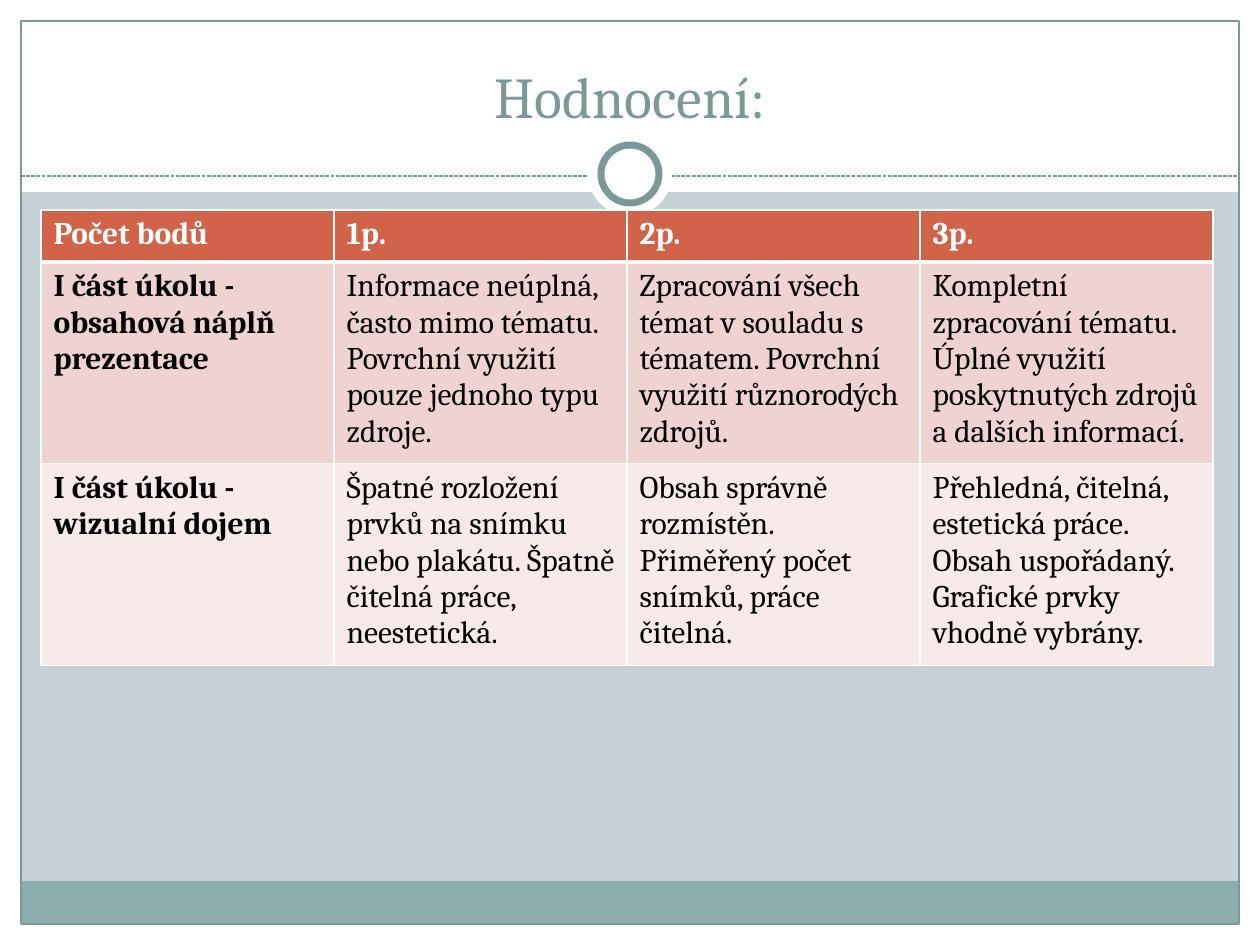
from lxml.etree import SubElement
from pptx import Presentation
from pptx.dml.color import RGBColor
from pptx.enum.dml import MSO_LINE
from pptx.enum.shapes import MSO_CONNECTOR, MSO_SHAPE
from pptx.enum.text import MSO_ANCHOR, PP_ALIGN
from pptx.oxml.ns import qn
from pptx.util import Emu, Pt

PIXELS_PER_INCH = 126
WIDTH, HEIGHT = 1260, 945
MARGIN = 21
FONT = "Cambria"

WHITE = RGBColor(0xFF, 0xFF, 0xFF)
BLACK = RGBColor(0x00, 0x00, 0x00)
BACKGROUND = RGBColor(0xC5, 0xD1, 0xD7)
TEAL = RGBColor(0x7C, 0x99, 0x9A)
FOOTER_TEAL = RGBColor(0x8C, 0xAD, 0xAE)
HEADER_RED = RGBColor(0xD1, 0x63, 0x49)
ROW_FILLS = [HEADER_RED, RGBColor(0xEE, 0xD3, 0xD0), RGBColor(0xF7, 0xEA, 0xE9)]

CRITERIA = [
    ["Počet bodů", "1p.", "2p.", "3p."],
    [
        "I část úkolu - obsahová náplň prezentace",
        "Informace neúplná, často mimo tématu. Povrchní využití pouze jednoho typu zdroje.",
        "Zpracování všech témat v souladu s tématem. Povrchní využití různorodých zdrojů.",
        "Kompletní zpracování tématu. Úplné využití poskytnutých zdrojů a dalších informací.",
    ],
    [
        "I část úkolu -\nwizualní dojem",
        "Špatné rozložení prvků na snímku nebo plakátu. Špatně čitelná práce, neestetická.",
        "Obsah správně rozmístěn. Přiměřený počet snímků, práce čitelná.",
        "Přehledná, čitelná, estetická práce. Obsah uspořádaný. Grafické prvky vhodně vybrány.",
    ],
]


def px(length):
    return Emu(round(length * 914400 / PIXELS_PER_INCH))


def write_text(text_frame, text, size, color, bold=False, align=PP_ALIGN.LEFT):
    text_frame.text = text
    for paragraph in text_frame.paragraphs:
        paragraph.alignment = align
        font = paragraph.runs[0].font
        font.name = FONT
        font.size = Pt(size)
        font.bold = bold
        font.color.rgb = color


def add_box(slide, left, top, width, height, fill=None, line=None, line_width=0.75,
            kind=MSO_SHAPE.RECTANGLE):
    shape = slide.shapes.add_shape(kind, px(left), px(top), px(width), px(height))
    shape.shadow.inherit = False
    if fill is None:
        shape.fill.background()
    else:
        shape.fill.solid()
        shape.fill.fore_color.rgb = fill
    if line is None:
        shape.line.fill.background()
    else:
        shape.line.color.rgb = line
        shape.line.width = Pt(line_width)


def add_circle(slide, center_x, center_y, diameter, **style):
    add_box(slide, center_x - diameter / 2, center_y - diameter / 2, diameter, diameter,
            kind=MSO_SHAPE.OVAL, **style)


def add_dashed_line(slide, left, right, y):
    connector = slide.shapes.add_connector(
        MSO_CONNECTOR.STRAIGHT, px(left), px(y), px(right), px(y))
    connector.line.color.rgb = TEAL
    connector.line.width = Pt(0.75)
    connector.line.dash_style = MSO_LINE.SQUARE_DOT
    SubElement(connector._element.spPr, qn("a:effectLst"))


def add_title(slide, text):
    title = slide.shapes.add_textbox(px(42), px(31), px(1176), px(105))
    title.text_frame.word_wrap = True
    title.text_frame.vertical_anchor = MSO_ANCHOR.BOTTOM
    write_text(title.text_frame, text, size=33, color=TEAL, align=PP_ALIGN.CENTER)


def set_borders(cell, **widths):
    properties = cell._tc.get_or_add_tcPr()
    for index, side in enumerate("LRTB"):
        border = SubElement(properties, qn(f"a:ln{side}"), w=str(Pt(widths.get(side, 1))))
        fill = SubElement(border, qn("a:solidFill"))
        SubElement(fill, qn("a:srgbClr"), val=str(WHITE))
        properties.insert(index, border)


def add_criteria_table(slide, left, top, column_width, row_height):
    row_count, column_count = len(CRITERIA), len(CRITERIA[0])
    table = slide.shapes.add_table(
        row_count, column_count, px(left), px(top),
        px(column_width * column_count), px(row_height * row_count)).table
    for column in table.columns:
        column.width = px(column_width)
    for row_index, texts in enumerate(CRITERIA):
        table.rows[row_index].height = px(row_height)
        is_header = row_index == 0
        for column_index, text in enumerate(texts):
            cell = table.cell(row_index, column_index)
            cell.fill.solid()
            cell.fill.fore_color.rgb = ROW_FILLS[row_index]
            set_borders(cell, T=3 if row_index == 1 else 1, B=3 if is_header else 1)
            write_text(cell.text_frame, text, size=18, color=WHITE if is_header else BLACK,
                       bold=is_header or column_index == 0)


def add_frame(slide):
    inner_width, inner_height = WIDTH - 2 * MARGIN, HEIGHT - 2 * MARGIN
    add_box(slide, 0, HEIGHT - MARGIN, WIDTH, MARGIN, fill=WHITE)
    add_box(slide, 0, 0, WIDTH, 192, fill=WHITE)
    for left in (0, WIDTH - MARGIN):
        add_box(slide, left, 0, MARGIN, HEIGHT, fill=WHITE)
    add_box(slide, MARGIN, 881, inner_width, 43, fill=FOOTER_TEAL)
    add_box(slide, MARGIN, MARGIN, inner_width, inner_height, line=TEAL)
    add_dashed_line(slide, MARGIN, WIDTH - MARGIN, 176)
    add_circle(slide, WIDTH / 2, 174, 84, fill=WHITE)
    add_circle(slide, WIDTH / 2, 174, 58, fill=WHITE, line=TEAL, line_width=4)


def main():
    presentation = Presentation()
    presentation.slide_width = px(WIDTH)
    presentation.slide_height = px(HEIGHT)
    slide = presentation.slides.add_slide(presentation.slide_layouts[6])
    slide.background.fill.solid()
    slide.background.fill.fore_color.rgb = BACKGROUND
    add_frame(slide)
    add_title(slide, "Hodnocení:")
    add_criteria_table(slide, left=41, top=210, column_width=293, row_height=52)
    presentation.save("out.pptx")


if __name__ == "__main__":
    main()
